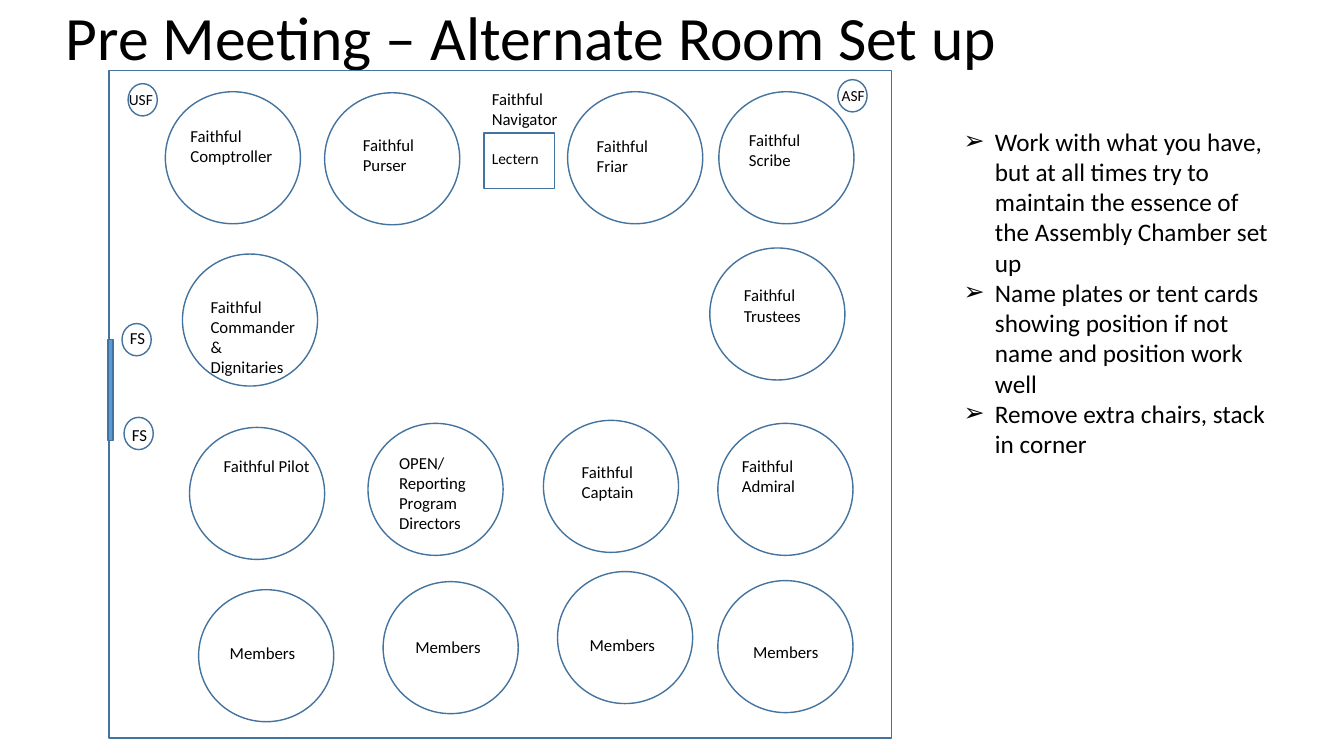
import pptx
import pptx.util
import pptx.dml.color
import pptx.enum.shapes
import pptx.enum.text
from dataclasses import dataclass
from lxml import etree

Inches = pptx.util.Inches
Pt = pptx.util.Pt
Kind = pptx.enum.shapes.MSO_SHAPE
Text = pptx.enum.text


@dataclass(frozen=True)
class Theme:
    font: str = "Calibri"
    ink: str = "000000"
    edge: str = "43739E"
    door: str = "5B9BD5"
    title: int = 44
    list: int = 18
    seat: int = 12
    small: int = 11


theme = Theme()
color = pptx.dml.color.RGBColor.from_string

deck = pptx.Presentation()
deck.slide_width = Inches(13.33)
deck.slide_height = Inches(7.5)
slide = deck.slides.add_slide(deck.slide_layouts[5])
shapes = slide.shapes


def outline(kind, box, fill=None):
    shape = shapes.add_shape(kind, *map(Inches, box))
    shape.shadow.inherit = False
    if fill:
        shape.fill.solid()
        shape.fill.fore_color.rgb = color(fill)
    else:
        shape.fill.background()
    shape.line.color.rgb = color(theme.edge)
    shape.line.width = Pt(1)


def write(shape, lines, size):
    """Fill the shape with left-aligned paragraphs and return them."""
    frame = shape.text_frame
    frame.text = "\n".join(lines)
    frame.word_wrap = True
    frame.auto_size = Text.MSO_AUTO_SIZE.NONE
    look = {"name": theme.font, "size": Pt(size)}
    for para in frame.paragraphs:
        para.alignment = Text.PP_ALIGN.LEFT
        for key, value in look.items():
            setattr(para.runs[0].font, key, value)
        para.runs[0].font.color.rgb = color(theme.ink)
    return frame.paragraphs


# Title
title = shapes.title
place = {"left": 0.55, "top": 0, "width": 11.5, "height": 0.8}
for key, value in place.items():
    setattr(title, key, Inches(value))
head = write(title, ["Pre Meeting – Alternate Room Set up"], theme.title)
head[0].line_spacing = 0.9
title.text_frame.vertical_anchor = Text.MSO_ANCHOR.MIDDLE

# Room, door and lectern
outline(Kind.RECTANGLE, (1.08, 0.7, 7.76, 6.62))
outline(Kind.RECTANGLE, (1.07, 3.37, 0.05, 1), theme.door)
outline(Kind.RECTANGLE, (4.8, 1.32, 0.7, 0.55))

# Tables: left and top of the circle, then of its label
tables = [
    ("Faithful Comptroller", 1.64, 0.91, 1.79, 1.2),
    ("Faithful Purser", 3.22, 0.92, 3.5, 1.29),
    ("Faithful Friar", 5.63, 0.91, 5.82, 1.3),
    ("Faithful Scribe", 7.13, 0.91, 7.33, 1.24),
    ("Faithful Commander & Dignitaries", 1.81, 2.52, 1.99, 2.89),
    ("Faithful Trustees", 7.04, 2.46, 7.28, 2.78),
    ("Faithful Pilot", 1.88, 4.24, 2.12, 4.47),
    ("OPEN/ Reporting Program Directors", 3.65, 4.2, 3.86, 4.44),
    ("Faithful Captain", 5.39, 4.17, 5.67, 4.53),
    ("Faithful Admiral", 7.12, 4.2, 7.26, 4.47),
    ("Members", 1.97, 5.85, 2.18, 6.33),
    ("Members", 3.8, 5.77, 4.02, 6.27),
    ("Members", 5.53, 5.67, 5.75, 6.25),
    ("Members", 7.12, 5.76, 7.37, 6.32),
]
heights = {1: 0.3, 2: 0.5, 4: 0.91}
labels = [
    ("Faithful Navigator", 4.78, 0.83, 1.04, 0.5, theme.seat),
    ("Lectern", 4.78, 1.43, 0.74, 0.29, theme.small),
]
for name, left, top, x, y in tables:
    outline(Kind.OVAL, (left, top, 1.34, 1.31))
    tall = heights[len(name.split())]
    labels.append((name, x, y, 1.05, tall, theme.seat))

# Single posts: left and top of the circle, then the label's box
posts = [
    ("USF", 1.27, 0.83, 1.18, 0.84, 0.53, theme.small),
    ("ASF", 8.31, 0.79, 8.25, 0.81, 0.46, theme.small),
    ("FS", 1.21, 3.21, 1.19, 3.2, 0.37, theme.seat),
    ("FS", 1.23, 4.14, 1.21, 4.16, 0.37, theme.seat),
]
for name, left, top, x, y, wide, size in posts:
    outline(Kind.OVAL, (left, top, 0.29, 0.32))
    labels.append((name, x, y, wide, 0.3, size))

for name, x, y, wide, tall, size in labels:
    box = shapes.add_textbox(*map(Inches, (x, y, wide, tall)))
    write(box, [name], size)

# Advice list
advice = [
    "Work with what you have, but at all times try to maintain the essence "
    "of the Assembly Chamber set up",
    "Name plates or tent cards showing position if not name and position "
    "work well",
    "Remove extra chairs, stack in corner",
]
box = shapes.add_textbox(*map(Inches, (9.46, 1.2, 3.25, 3.43)))
space = "{http://schemas.openxmlformats.org/drawingml/2006/main}"
for para in write(box, advice, theme.list):
    props = para._p.get_or_add_pPr()
    props.set("marL", str(Inches(0.31)))
    props.set("indent", str(Inches(-0.31)))
    etree.SubElement(props, space + "buFont", typeface="Arial")
    etree.SubElement(props, space + "buChar", char="➢")

deck.save("out.pptx")
